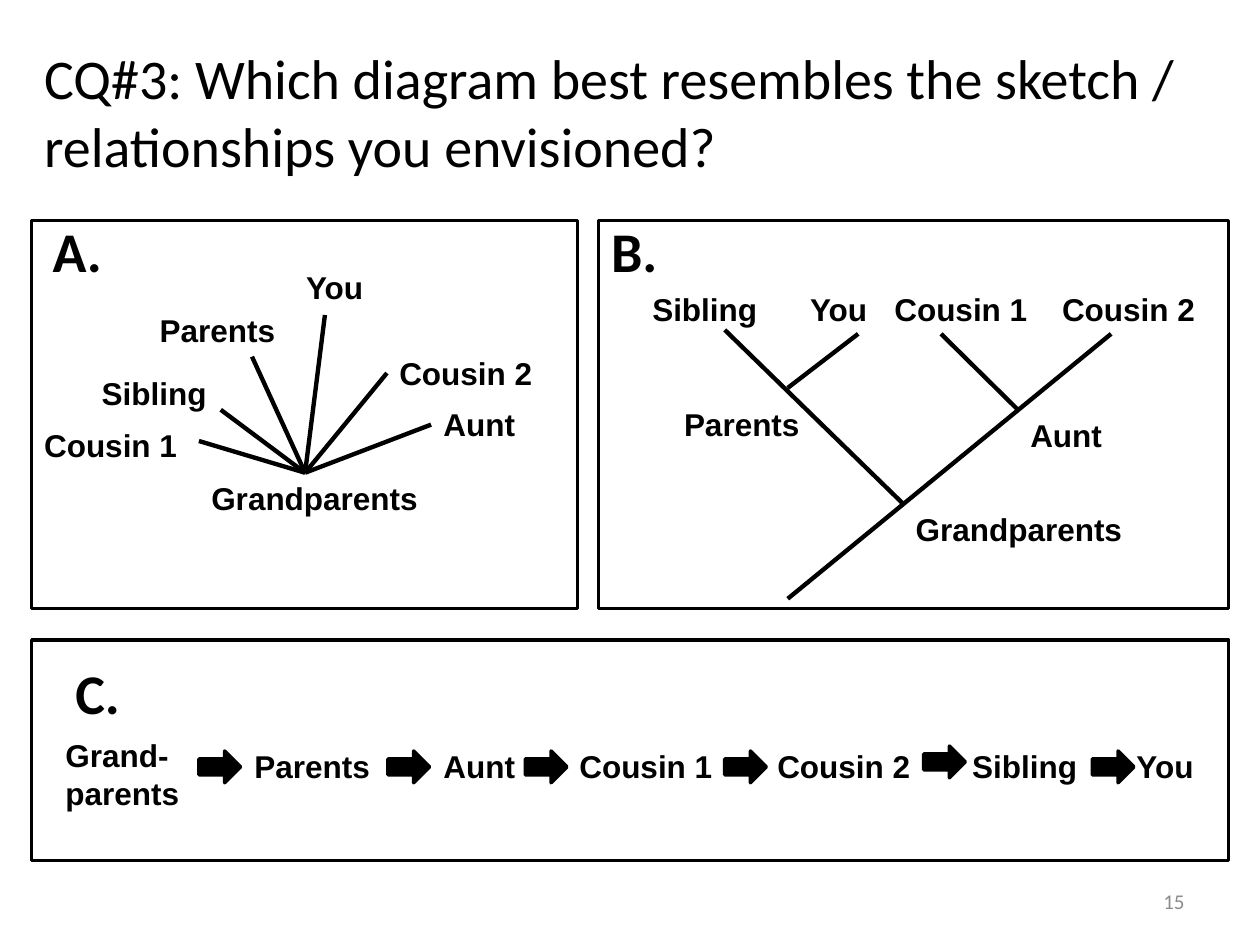
from dataclasses import dataclass

from lxml.etree import SubElement
from pptx import Presentation
from pptx.dml.color import RGBColor
from pptx.enum.shapes import MSO_CONNECTOR, MSO_SHAPE
from pptx.enum.text import MSO_ANCHOR, PP_ALIGN
from pptx.oxml.ns import qn
from pptx.shapes.autoshape import Shape
from pptx.slide import Slide
from pptx.util import Cm, Pt

COLORS = {"ink": "000000", "page_number": "8C8C8C"}

# All positions and sizes below are in centimetres
LABEL_WIDTHS = {
    "Grandparents": 4.72, "Grand-\nparents": 2.82, "Parents": 2.87, "Aunt": 1.98,
    "Cousin 1": 3.23, "Cousin 2": 3.23, "Sibling": 2.64, "You": 1.68,
    "A.": 1.55, "B.": 1.47, "C.": 1.47,
}
LINE_HEIGHT = 1.02
LETTER_HEIGHT = 1.63
ARROW_SIZE = (0.84, 0.64)


@dataclass
class Box:
    left: float
    top: float
    width: float
    height: float


@dataclass
class Label:
    text: str
    left: float
    top: float


@dataclass
class Branch:
    start: tuple[float, float]
    end: tuple[float, float]


@dataclass
class Panel:
    letter: Label
    frame: Box
    labels: list[Label]
    branches: list[Branch]
    arrows: list[tuple[float, float]]


# Panel A: every relative radiates from the grandparents
HUB = (6.15, 9.53)
RAY_ENDS = [(4.01, 8.89), (4.45, 8.26), (5.08, 7.19), (6.55, 6.35), (7.8, 7.52), (8.69, 8.56)]
STAR = Panel(
    Label("A.", 0.81, 4.24),
    Box(0.64, 4.45, 11, 7.82),
    [
        Label("Grandparents", 4.01, 9.53), Label("Parents", 2.97, 6.15),
        Label("Aunt", 8.69, 8.05), Label("Cousin 1", 0.64, 8.46),
        Label("Sibling", 1.8, 7.42), Label("You", 5.92, 5.28), Label("Cousin 2", 7.8, 7.01),
    ],
    [Branch(HUB, end) for end in RAY_ENDS],
    [],
)

# Panel B: branching tree
TIP_TOP = 5.72
TREE = Panel(
    Label("B.", 12.07, 4.24),
    Box(12.07, 4.45, 12.7, 7.82),
    [
        Label("Grandparents", 18.21, 10.16), Label("Parents", 13.54, 8.05),
        Label("Aunt", 20.52, 8.26), Label("Sibling", 12.9, TIP_TOP),
        Label("You", 16.08, TIP_TOP), Label("Cousin 1", 17.78, TIP_TOP),
        Label("Cousin 2", 21.16, TIP_TOP),
    ],
    [
        Branch((15.88, 12.07), (22.4, 6.73)), Branch((18.21, 10.16), (14.61, 6.65)),
        Branch((15.88, 7.82), (17.3, 6.73)), Branch((20.52, 8.26), (18.97, 6.73)),
    ],
    [],
)

# Panel C: a single chain
CHAIN_TOP, ARROW_TOP = 14.94, 15.14
CHAIN = Panel(
    Label("C.", 1.27, 13.16),
    Box(0.64, 12.9, 24.13, 4.45),
    [
        Label("Grand-\nparents", 1.07, 14.71), Label("Parents", 4.88, CHAIN_TOP),
        Label("Aunt", 8.69, CHAIN_TOP), Label("Cousin 1", 11.43, CHAIN_TOP),
        Label("Cousin 2", 15.42, CHAIN_TOP), Label("Sibling", 19.35, CHAIN_TOP),
        Label("You", 22.66, CHAIN_TOP),
    ],
    [],
    [(left, ARROW_TOP) for left in (4.01, 7.82, 10.59, 14.61)]
    + [(18.62, 15.04), (22.02, ARROW_TOP)],
)


def color(name: str) -> RGBColor:
    return RGBColor.from_string(COLORS[name])


def add_text(slide: Slide, text: str, box: Box, size: int, font_name: str = "Calibri",
             bold: bool = False, wrap: bool = False, ink: str = "ink") -> Shape:
    shape = slide.shapes.add_textbox(Cm(box.left), Cm(box.top), Cm(box.width), Cm(box.height))
    shape.text_frame.text = text
    shape.text_frame.word_wrap = wrap
    for paragraph in shape.text_frame.paragraphs:
        paragraph.font.name = font_name
        paragraph.font.size = Pt(size)
        paragraph.font.bold = bold
        paragraph.font.color.rgb = color(ink)
    return shape


def add_label(slide: Slide, label: Label, height: float, size: int, font_name: str) -> None:
    box = Box(label.left, label.top, LABEL_WIDTHS[label.text], height)
    add_text(slide, label.text, box, size, font_name, bold=True)


def add_outlined(slide: Slide, kind: MSO_SHAPE, box: Box, filled: bool) -> None:
    shape = slide.shapes.add_shape(kind, Cm(box.left), Cm(box.top), Cm(box.width), Cm(box.height))
    shape.shadow.inherit = False
    if filled:
        shape.fill.solid()
        shape.fill.fore_color.rgb = color("ink")
    else:
        shape.fill.background()
    shape.line.color.rgb = color("ink")
    shape.line.width = Pt(2)


def add_branch(slide: Slide, branch: Branch) -> None:
    ends = [Cm(value) for value in (*branch.start, *branch.end)]
    connector = slide.shapes.add_connector(MSO_CONNECTOR.STRAIGHT, *ends)
    connector.line.color.rgb = color("ink")
    connector.line.width = Pt(2.5)
    SubElement(connector.element.spPr, qn("a:effectLst"))


def add_panel(slide: Slide, panel: Panel) -> None:
    add_label(slide, panel.letter, LETTER_HEIGHT, 32, "Calibri")
    for label in panel.labels:
        height = 1.8 if "\n" in label.text else LINE_HEIGHT
        add_label(slide, label, height, 18, "Arial")
    for branch in panel.branches:
        add_branch(slide, branch)
    for position in panel.arrows:
        add_outlined(slide, MSO_SHAPE.RIGHT_ARROW, Box(*position, *ARROW_SIZE), filled=True)
    add_outlined(slide, MSO_SHAPE.RECTANGLE, panel.frame, filled=False)


def main() -> None:
    presentation = Presentation()
    presentation.slide_width, presentation.slide_height = Cm(25.4), Cm(19.05)
    slide = presentation.slides.add_slide(presentation.slide_layouts[6])

    # Page number
    number = add_text(slide, "15", Box(18.21, 17.65, 5.92, 1.02), 12, wrap=True, ink="page_number")
    number.text_frame.vertical_anchor = MSO_ANCHOR.MIDDLE
    number.text_frame.paragraphs[0].alignment = PP_ALIGN.RIGHT

    # Question
    question = "CQ#3: Which diagram best resembles the sketch / relationships you envisioned?"
    add_text(slide, question, Box(0.64, 0.76, 23.93, 3), 32, wrap=True)

    # Answer panels
    for panel in (CHAIN, TREE, STAR):
        add_panel(slide, panel)

    presentation.save("out.pptx")


if __name__ == "__main__":
    main()
